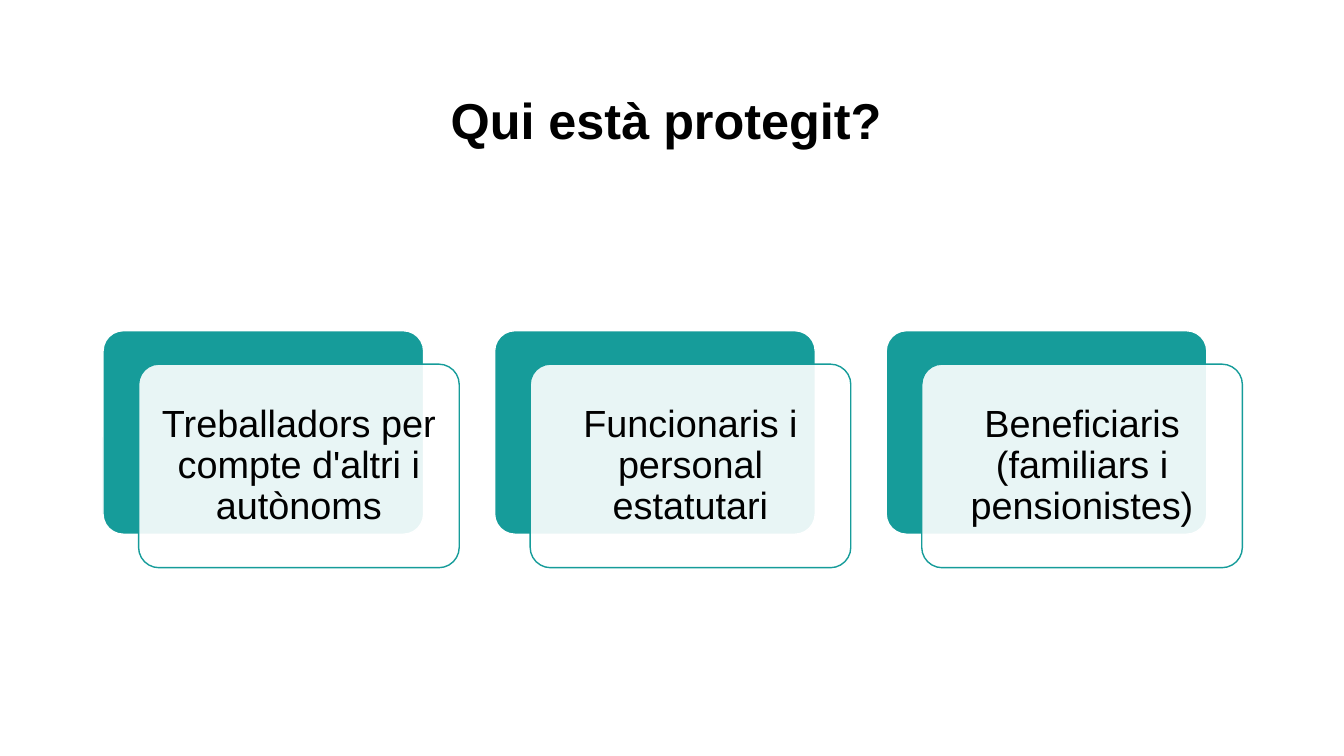
from lxml.etree import SubElement
from pptx import Presentation
from pptx.dml.color import RGBColor
from pptx.enum.shapes import MSO_SHAPE
from pptx.enum.text import MSO_ANCHOR, PP_ALIGN
from pptx.oxml.ns import qn
from pptx.util import Pt

TEAL = RGBColor(0x16, 0x9C, 0x9A)
WHITE = RGBColor(0xFF, 0xFF, 0xFF)
BLACK = RGBColor(0, 0, 0)

GROUPS = [
    "Treballadors per compte d'altri i autònoms",
    "Funcionaris i personal estatutari",
    "Beneficiaris (familiars i pensionistes)",
]
CARD_W, CARD_H = 229, 145.4
SHIFT_X, SHIFT_Y = 25.4, 23.9


def write(tf, text, size, bold=False):
    tf.word_wrap = True
    tf.vertical_anchor = MSO_ANCHOR.MIDDLE
    p = tf.paragraphs[0]
    p.text = text
    p.alignment = PP_ALIGN.CENTER
    p.line_spacing = 0.9
    p.font.name = "Arial"
    p.font.size = Pt(size)
    p.font.bold = bold
    p.font.color.rgb = BLACK


def add_title(slide, text, left, top, width, height):
    sp = slide.shapes.title
    sp.left, sp.top, sp.width, sp.height = Pt(left), Pt(top), Pt(width), Pt(height)
    write(sp.text_frame, text, 36, bold=True)


def add_card(slide, left, top, fill, line):
    sp = slide.shapes.add_shape(MSO_SHAPE.ROUNDED_RECTANGLE,
                                Pt(left), Pt(top), Pt(CARD_W), Pt(CARD_H))
    sp.adjustments[0] = 0.1
    sp.shadow.inherit = False
    sp.fill.solid()
    sp.fill.fore_color.rgb = fill
    sp.line.color.rgb = line
    sp.line.width = Pt(1)
    return sp


def set_opacity(sp, percent):
    color = sp.fill._xPr.find(qn("a:solidFill"))[0]
    SubElement(color, qn("a:alpha")).set("val", str(percent * 1000))


def add_group_card(slide, text, left, top):
    """Teal card with a translucent text card shifted down and right over it."""
    add_card(slide, left, top, TEAL, WHITE)
    front = add_card(slide, left + SHIFT_X, top + SHIFT_Y, WHITE, TEAL)
    set_opacity(front, 90)
    tf = front.text_frame
    tf.margin_left = tf.margin_right = tf.margin_top = tf.margin_bottom = Pt(8)
    write(tf, text, 27)


def add_group_row(slide, texts, left, top, width):
    """Spread the cards evenly so the last one ends at the right edge."""
    step = (width - CARD_W - SHIFT_X) / (len(texts) - 1)
    for i, text in enumerate(texts):
        add_group_card(slide, text, left + i * step, top)


def main():
    prs = Presentation()
    prs.slide_width, prs.slide_height = Pt(960), Pt(540)
    slide = prs.slides.add_slide(prs.slide_layouts[5])
    add_title(slide, "Qui està protegit? ", 120.2, 43.2, 721.4, 89.3)
    add_group_row(slide, GROUPS, 73.6, 236.2, 813.8)
    prs.save("out.pptx")


if __name__ == "__main__":
    main()
